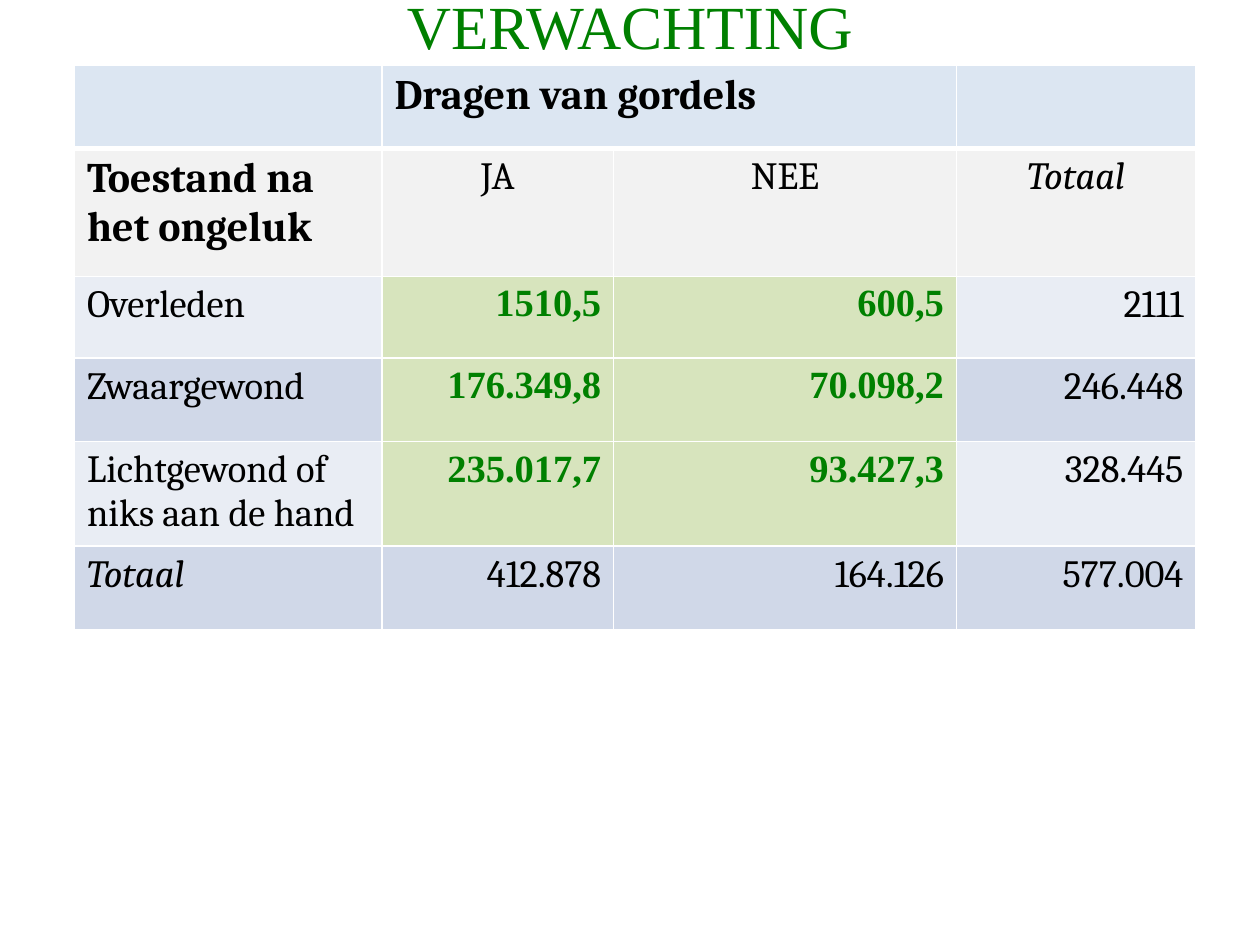
from lxml.etree import SubElement as Sub
from pptx import Presentation
from pptx.dml.color import RGBColor as Rgb
from pptx.enum.text import MSO_ANCHOR as Anchor, MSO_AUTO_SIZE as Fit, PP_ALIGN as Align
from pptx.oxml.ns import qn
from pptx.util import Cm, Pt

BLACK = Rgb(0x00, 0x00, 0x00)
GREEN = Rgb(0x00, 0x80, 0x00)
WHITE = Rgb(0xFF, 0xFF, 0xFF)
HEAD = Rgb(0xDC, 0xE6, 0xF2)
GREY = Rgb(0xF2, 0xF2, 0xF2)
LIGHT = Rgb(0xE9, 0xED, 0xF4)
DARK = Rgb(0xD0, 0xD8, 0xE8)
LIME = Rgb(0xD7, 0xE4, 0xBD)

SERIF = "Times New Roman"
BODY = "Cambria"

COLS = (6.2, 4.67, 6.91, 4.83)
ROWS = (1.68, 2.57, 1.65, 1.68, 2.11, 1.68)
BANDS = (HEAD, GREY, LIGHT, DARK, LIGHT, DARK)
DATA = (
    ("", "Dragen van gordels", "", ""),
    ("Toestand na het ongeluk", "JA", "NEE", "Totaal"),
    ("Overleden", "1510,5", "600,5", "2111"),
    ("Zwaargewond", "176.349,8", "70.098,2", "246.448"),
    ("Lichtgewond of\nniks aan de hand", "235.017,7", "93.427,3", "328.445"),
    ("Totaal", "412.878", "164.126", "577.004"),
)


def add_run(para, text, size, face, color, bold=False, italic=False):
    run = para.add_run()
    run.text = text
    font = run.font
    font.size, font.name = Pt(size), face
    font.bold, font.italic = bold, italic
    font.color.rgb = color


def add_title(slide, text):
    title = slide.shapes.title
    title.left, title.top = Cm(1.27), Cm(-0.08)
    title.width, title.height = Cm(22.86), Cm(1.17)
    frame = title.text_frame
    frame.auto_size = Fit.NONE
    frame.vertical_anchor = Anchor.MIDDLE
    para = frame.paragraphs[0]
    para.alignment = Align.CENTER
    add_run(para, text, 35, SERIF, GREEN)


def set_lines(cell, base):
    # Borders must come before the fill in the cell properties
    props = cell._tc.get_or_add_tcPr()
    for side, width in (("L", 1), ("R", 1), ("T", 1), ("B", base)):
        line = Sub(props, qn(f"a:ln{side}"), w=str(Pt(width)))
        fill = Sub(line, qn("a:solidFill"))
        Sub(fill, qn("a:srgbClr"), val=str(WHITE))


def fill_cell(cell, row, col):
    text = DATA[row][col]
    hit = 2 <= row <= 4 and col in (1, 2)  # expected counts
    label = row == 0 or (row == 1 and col == 0)
    total = text == "Totaal"

    set_lines(cell, 3 if row == 0 else 1)
    cell.fill.solid()
    cell.fill.fore_color.rgb = LIME if hit else BANDS[row]
    if not text:
        return

    if row == 0 or col == 0:
        side = Align.LEFT
    else:
        side = Align.CENTER if row == 1 else Align.RIGHT
    frame = cell.text_frame
    for i, part in enumerate(text.split("\n")):
        para = frame.add_paragraph() if i else frame.paragraphs[0]
        para.alignment = side
        add_run(para, part, 24 if label else 22, SERIF if hit else BODY,
                GREEN if hit else BLACK, label or hit, total)


def add_grid(slide):
    grid = slide.shapes.add_table(len(ROWS), len(COLS), Cm(1.5), Cm(1.32),
                                  Cm(sum(COLS)), Cm(sum(ROWS))).table
    for col, width in zip(grid.columns, COLS):
        col.width = Cm(width)
    for row, height in zip(grid.rows, ROWS):
        row.height = Cm(height)
    for row in range(len(ROWS)):
        for col in range(len(COLS)):
            fill_cell(grid.cell(row, col), row, col)
    grid.cell(0, 1).merge(grid.cell(0, 2))


def main():
    deck = Presentation()
    deck.slide_width, deck.slide_height = Cm(25.4), Cm(19.05)
    slide = deck.slides.add_slide(deck.slide_layouts[5])
    # Heading
    add_title(slide, "VERWACHTING")
    # Expected counts by seat belt use
    add_grid(slide)
    deck.save("out.pptx")


if __name__ == "__main__":
    main()
